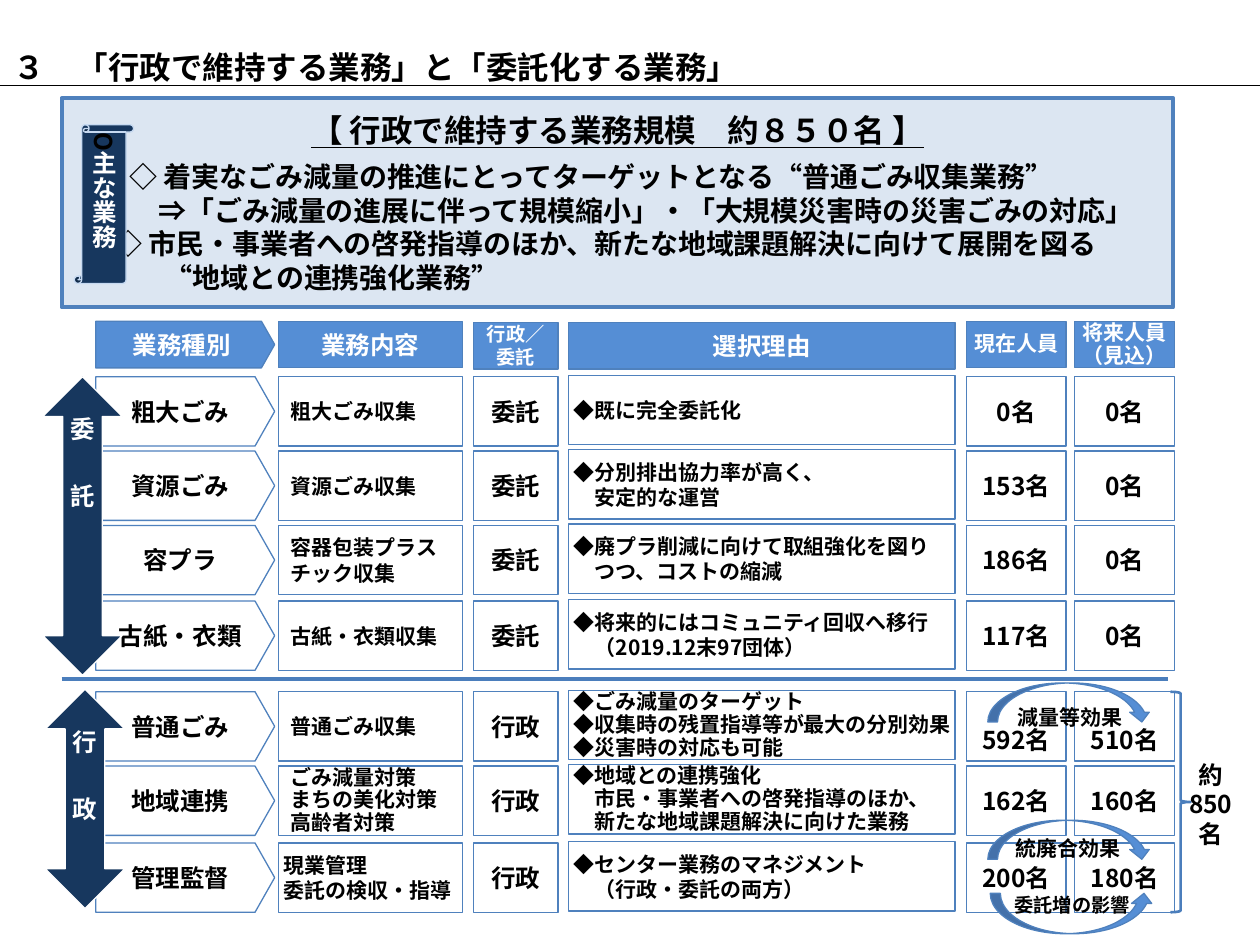
from lxml import etree
from pptx import Presentation
from pptx.dml.color import RGBColor
from pptx.enum.shapes import MSO_CONNECTOR as Connector, MSO_SHAPE as Shape
from pptx.enum.text import MSO_ANCHOR as Anchor, PP_ALIGN as Align
from pptx.oxml.ns import qn
from pptx.util import Inches, Pt

FONT = "Noto Sans CJK JP"
BLACK, WHITE = "000000", "FFFFFF"
BLUE, EDGE, RULE, NAVY = "558ED5", "4F81BD", "4B7EBC", "17375E"
PALE, SCROLL_EDGE = "DCE6F2", "C6D9F1"


def color(value):
    return RGBColor.from_string(value)


def write_text(shape, lines, size=14, ink=BLACK, align=Align.CENTER, anchor=Anchor.MIDDLE,
               insets=(0.1, 0.05, 0.1, 0.05), spacing=None, gap=0, indents=(), underline_first=False):
    """Write one paragraph per line; a line is a string or a list of (text, ink) runs."""
    frame = shape.text_frame
    frame.word_wrap = True
    frame.vertical_anchor = anchor
    frame.margin_left, frame.margin_top, frame.margin_right, frame.margin_bottom = map(Inches, insets)
    for i, line in enumerate([lines] if isinstance(lines, str) else lines):
        paragraph = frame.paragraphs[0] if i == 0 else frame.add_paragraph()
        paragraph.alignment = align[i] if isinstance(align, list) else align
        paragraph.space_before = Pt(gap if i == 1 else 0)
        if spacing:
            paragraph.line_spacing = Pt(spacing)
        if i < len(indents):
            properties = paragraph._p.get_or_add_pPr()
            properties.set("marL", str(Inches(indents[i])))
            properties.set("indent", "0")
        for text, run_ink in [(line, ink)] if isinstance(line, str) else line:
            run = paragraph.add_run()
            run.text = text
            font = run.font
            font.size, font.bold, font.name = Pt(size), True, FONT
            font.underline = underline_first and i == 0
            font.color.rgb = color(run_ink)
            etree.SubElement(run._r.get_or_add_rPr(), qn("a:ea")).set("typeface", FONT)


class SlideBuilder:
    def __init__(self, slide):
        self.slide = slide

    def title(self, text, box):
        heading = self.slide.shapes.title
        heading.left, heading.top, heading.width, heading.height = map(Inches, box)
        write_text(heading, text, size=18, align=Align.LEFT, anchor=Anchor.BOTTOM, insets=(0.1, 0, 0.1, 0))

    def shape(self, kind, box, lines=None, fill=None, edge=EDGE, width=0.75, adjust=(), vertical=False, **style):
        shape = self.slide.shapes.add_shape(kind, *map(Inches, box))
        shape.shadow.inherit = False
        if fill:
            shape.fill.solid()
            shape.fill.fore_color.rgb = color(fill)
        else:
            shape.fill.background()
        shape.line.color.rgb = color(edge)
        shape.line.width = Pt(width)
        for i, value in enumerate(adjust):
            shape.adjustments[i] = value
        if lines:
            write_text(shape, lines, **style)
        if vertical:
            shape.text_frame._txBody.bodyPr.set("vert", "eaVert")

    def label(self, box, lines, **style):
        write_text(self.slide.shapes.add_textbox(*map(Inches, box)), lines, **style)

    def line(self, x1, x2, y, ink, width):
        rule = self.slide.shapes.add_connector(Connector.STRAIGHT, *map(Inches, (x1, y, x2, y)))
        rule.line.color.rgb = color(ink)
        rule.line.width = Pt(width)
        etree.SubElement(rule._element.spPr, qn("a:effectLst"))


# Columns: left, width
KIND, CONTENT, BY, REASON, NOW, FUTURE = (
    (0.76, 1.42), (2.21, 1.46), (3.76, 0.67), (4.51, 3.07), (7.67, 0.79), (8.53, 0.79))
ROW_HEIGHT, HEADER_HEIGHT = 0.55, 0.37
PLATE = [0.283]

HEADERS = [
    (Shape.PENTAGON, KIND, 2.55, "業務種別", {"adjust": PLATE}),
    (Shape.RECTANGLE, CONTENT, 2.55, "業務内容", {}),
    (Shape.RECTANGLE, BY, 2.56, "行政／委託", {"size": 11, "spacing": 13}),
    (Shape.RECTANGLE, REASON, 2.56, "選択理由", {}),
    (Shape.RECTANGLE, NOW, 2.55, "現在人員", {"size": 12, "spacing": 13, "insets": (0.04, 0.05, 0.04, 0.05)}),
    (Shape.RECTANGLE, FUTURE, 2.55, "将来人員（見込）",
     {"size": 12, "spacing": 13, "insets": (0.04, 0.05, 0.04, 0.05)}),
]

# Top, kind, content, run by, reason, staff now, staff in future
ROWS = [
    (2.99, "粗大ごみ", ["粗大ごみ収集"], "委託", ["◆既に完全委託化"], "0名", "0名"),
    (3.58, "資源ごみ", ["資源ごみ収集"], "委託", ["◆分別排出協力率が高く、", "安定的な運営"], "153名", "0名"),
    (4.17, "容プラ", ["容器包装プラスチック収集"], "委託",
     ["◆廃プラ削減に向けて取組強化を図り", "つつ、コストの縮減"], "186名", "0名"),
    (4.77, "古紙・衣類", ["古紙・衣類収集"], "委託",
     ["◆将来的にはコミュニティ回収へ移行", "（2019.12末97団体）"], "117名", "0名"),
    (5.49, "普通ごみ", ["普通ごみ収集"], "行政",
     ["◆ごみ減量のターゲット", "◆収集時の残置指導等が最大の分別効果", "◆災害時の対応も可能"], "592名", "510名"),
    (6.08, "地域連携", ["ごみ減量対策", "まちの美化対策", "高齢者対策"], "行政",
     ["◆地域との連携強化", "市民・事業者への啓発指導のほか、", "新たな地域課題解決に向けた業務"], "162名", "160名"),
    (6.69, "管理監督", ["現業管理", "委託の検収・指導"], "行政",
     ["◆センター業務のマネジメント", "（行政・委託の両方）"], "200名", "180名"),
]


def add_row(page, top, kind, content, run_by, reason, now, future):
    def cell(column, lines, shape=Shape.RECTANGLE, rise=0, **style):
        left, width = column
        page.shape(shape, (left, top - rise, width, ROW_HEIGHT), lines, **style)

    def tight(lines):
        return 13 if len(lines) == 3 else None

    cell(KIND, kind, Shape.PENTAGON, adjust=PLATE)
    cell(CONTENT, content, size=12, align=Align.LEFT, spacing=tight(content),
         insets=(0.04 if len(content) == 2 else 0.1, 0.05, 0.08, 0.05))
    cell(BY, run_by)
    cell(REASON, reason, rise=0.01, size=12, align=Align.LEFT, spacing=tight(reason),
         insets=(0.04, 0.04, 0, 0.04), indents=[0 if line[0] == "◆" else 0.17 for line in reason])
    # The first row kept in-house leaves room above for the effect arrow
    anchor = Anchor.BOTTOM if kind == "普通ごみ" else Anchor.MIDDLE
    cell(NOW, now, anchor=anchor)
    cell(FUTURE, future, anchor=anchor)


def main():
    deck = Presentation()
    deck.slide_width, deck.slide_height = Inches(10), Inches(7.5)
    page = SlideBuilder(deck.slides.add_slide(deck.slide_layouts[5]))

    # Title
    page.line(0, 10, 0.68, BLACK, 0.75)
    page.title("３　「行政で維持する業務」と「委託化する業務」", (0.01, -0.01, 9.99, 0.69))

    # Summary panel
    page.shape(Shape.RECTANGLE, (0.49, 0.78, 8.82, 1.66), [
        [("【 行政で維持する業務規模　約８５０名 】", BLACK)],
        "◇ 着実なごみ減量の推進にとってターゲットとなる“普通ごみ収集業務”",
        "⇒「ごみ減量の進展に伴って規模縮小」・「大規模災害時の災害ごみの対応」",
        "◇ 市民・事業者への啓発指導のほか、新たな地域課題解決に向けて展開を図る",
        "“地域との連携強化業務”",
    ], fill=PALE, width=2.5, size=16, align=[Align.CENTER] + [Align.LEFT] * 4, gap=6,
        indents=(0, 0.44, 0.67, 0.32, 0.72), underline_first=True)
    panel = page.slide.shapes[-1]
    panel.text_frame.paragraphs[0].runs[0].font.size = Pt(18)
    page.shape(Shape.VERTICAL_SCROLL, (0.59, 0.99, 0.47, 1.26), [[("O", BLACK), ("主な業務", WHITE)]],
               fill=NAVY, edge=SCROLL_EDGE, vertical=True, insets=(0.04, 0, 0.04, 0))

    # Header and rows
    for kind, (left, width), top, text, style in HEADERS:
        page.shape(kind, (left, top, width, HEADER_HEIGHT), text, fill=BLUE, ink=WHITE, **style)
    for row in ROWS:
        add_row(page, *row)
    page.line(0.49, 9.27, 5.39, RULE, 2)

    # Group arrows
    for left, top, height, letters in [(0.36, 5.47, 1.74, "行政"), (0.34, 2.99, 2.37, "委託")]:
        page.shape(Shape.UP_DOWN_ARROW, (left, top, 0.63, height), list(letters), fill=NAVY, edge=WHITE,
                   adjust=(0.632, 0.5), ink=WHITE, anchor=Anchor.TOP, insets=(0, 0.14, 0, 0), gap=21.5)

    # Total
    page.shape(Shape.RIGHT_BRACE, (9.29, 5.49, 0.16, 1.75), edge=RULE, width=1.5)
    page.label((9.31, 5.52, 0.6, 1.72), ["約", "850名"])

    # Effects on staff numbers
    for kind, arrow, text, place, size in [
        (Shape.CURVED_DOWN_ARROW, (7.84, 5.42, 1.3, 0.31), "減量等効果", (7.9, 5.59), 12),
        (Shape.CURVED_DOWN_ARROW, (7.84, 6.51, 1.3, 0.31), "統廃合効果", (7.89, 6.63), 12),
        (Shape.CURVED_UP_ARROW, (7.86, 7.09, 1.3, 0.32), "委託増の影響", (7.92, 7.08), 11),
    ]:
        page.shape(kind, arrow, fill=BLUE)
        page.label((*place, 1.18, 0.2), text, size=size)

    deck.save("out.pptx")


if __name__ == "__main__":
    main()
